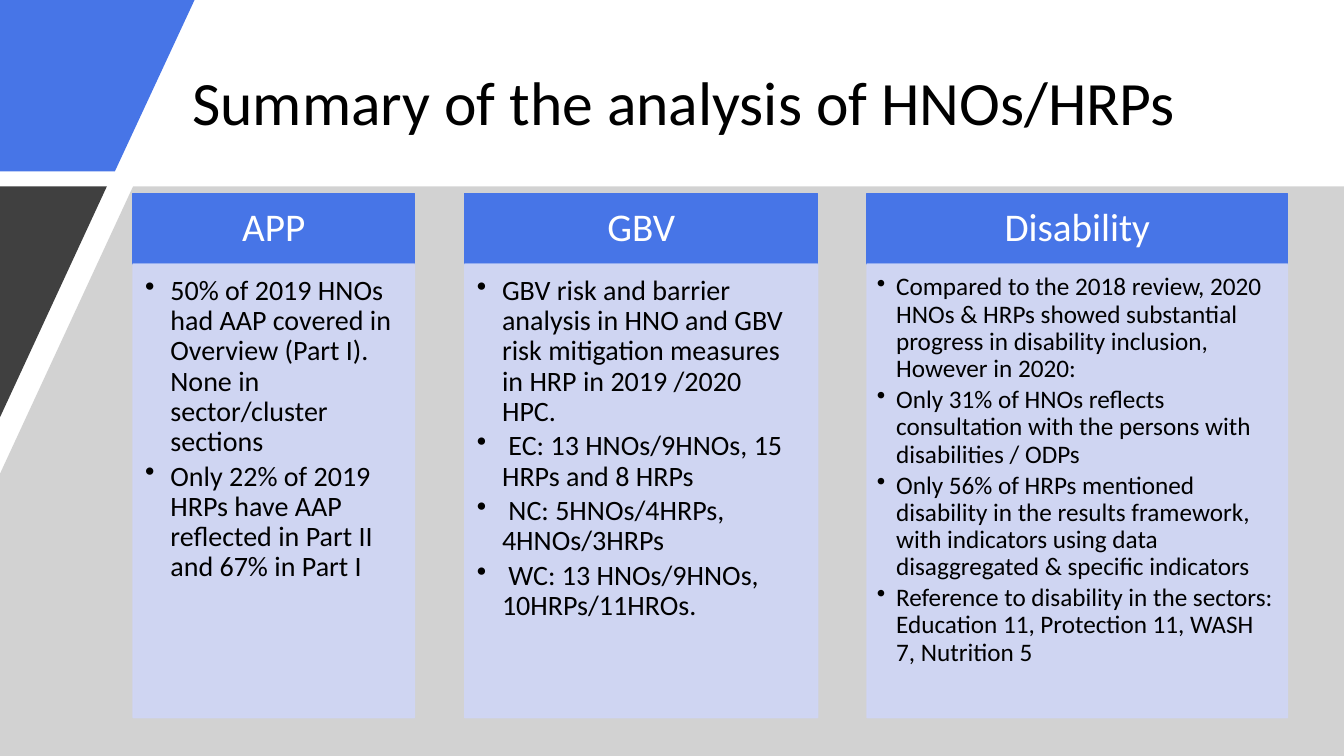
import pptx
import pptx.dml.color
import pptx.enum.shapes
import pptx.enum.text
import pptx.oxml
import pptx.oxml.ns
import pptx.util
from lxml import etree

PX = 9144  # 100 px to the inch
SLIDE_WIDTH, SLIDE_HEIGHT = 1333, 750
FONT = "Calibri"
BLUE, PALE_BLUE, GREY, DARK = "4775E7", "CFD6F6", "A6A6A6", "404040"
BLACK, WHITE = "000000", "FFFFFF"

HEADER_TOP, HEADER_HEIGHT, BODY_HEIGHT = 192, 70, 450
HEADER_INSETS = (22, 12, 22, 12)
WIDE_INSETS = (12, 12, 16, 17)
TIGHT_INSETS = (10, 10, 14, 16)

# heading, left, width, text size, bullet indent, body insets, points
COLUMNS = [
    ("APP", 132, 279, 20, 25, WIDE_INSETS, [
        "50% of 2019 HNOs had AAP covered in Overview (Part I). None in sector/cluster sections",
        "Only 22% of 2019 HRPs have AAP reflected in Part II and 67% in Part I",
    ]),
    ("GBV", 461, 350, 20, 25, WIDE_INSETS, [
        "GBV risk and barrier analysis in HNO and GBV risk mitigation measures in HRP in 2019 /2020 HPC. ",
        " EC: 13 HNOs/9HNOs, 15 HRPs and 8 HRPs",
        " NC: 5HNOs/4HRPs, 4HNOs/3HRPs",
        " WC: 13 HNOs/9HNOs, 10HRPs/11HROs. ",
    ]),
    ("Disability", 860, 417, 18, 19, TIGHT_INSETS, [
        "Compared to the 2018 review, 2020 HNOs & HRPs showed substantial progress in disability "
        "inclusion, However in 2020: ",
        "Only 31% of HNOs reflects consultation with the persons with disabilities / ODPs ",
        "Only 56% of HRPs mentioned disability in the results framework, with indicators using data "
        "disaggregated & specific indicators ",
        "Reference to disability in the sectors: Education 11, Protection 11, WASH 7, Nutrition 5 ",
    ]),
]


def px(length):
    return pptx.util.Emu(length * PX)


def color(hex_code):
    return pptx.dml.color.RGBColor.from_string(hex_code)


def paint(fill, hex_code, opacity=100):
    """Give a shape's or a line's fill a solid colour, opacity in percent."""
    fill.solid()
    fill.fore_color.rgb = color(hex_code)
    if opacity < 100:
        fill_xml = fill._xPr.find(pptx.oxml.ns.qn("a:solidFill"))
        alpha = etree.SubElement(fill_xml[0], pptx.oxml.ns.qn("a:alpha"))
        alpha.set("val", str(opacity * 1000))


def add_polygon(page, points, hex_code, opacity=100):
    builder = page.shapes.build_freeform(*points[0], scale=PX)
    builder.add_line_segments(points[1:], close=True)
    shape = builder.convert_to_shape()
    shape.shadow.inherit = False
    paint(shape.fill, hex_code, opacity)
    shape.line.fill.background()


def add_card(page, left, top, width, height, hex_code, opacity=100):
    card = page.shapes.add_shape(
        pptx.enum.shapes.MSO_SHAPE.RECTANGLE, px(left), px(top), px(width), px(height))
    card.shadow.inherit = False
    paint(card.fill, hex_code, opacity)
    card.line.width = pptx.util.Pt(1)
    paint(card.line.fill, hex_code, opacity)
    return card


def set_frame(box, insets, anchor):
    frame = box.text_frame
    frame.word_wrap = True
    frame.vertical_anchor = anchor
    frame.margin_left, frame.margin_top, frame.margin_right, frame.margin_bottom = map(px, insets)


def write(para, text, size, hex_code, align):
    para.alignment = align
    para.line_spacing = 0.9
    span = para.add_run()
    span.text = text
    span.font.name = FONT
    span.font.size = pptx.util.Pt(size)
    span.font.color.rgb = color(hex_code)


def add_bullet(para, indent):
    properties = para._p.get_or_add_pPr()
    properties.set("marL", str(px(indent)))
    properties.set("indent", str(-px(indent)))
    bullet = etree.SubElement(properties, pptx.oxml.ns.qn("a:buChar"))
    bullet.set("char", "•")


def add_title(page, text):
    box = page.shapes.add_textbox(px(181), px(40), px(1024), px(130))
    set_frame(box, (10, 5, 10, 5), pptx.enum.text.MSO_ANCHOR.MIDDLE)
    write(box.text_frame.paragraphs[0], text, 44, BLACK, pptx.enum.text.PP_ALIGN.LEFT)


def add_column(page, heading, left, width, size, indent, insets, points):
    header = add_card(page, left, HEADER_TOP, width, HEADER_HEIGHT, BLUE)
    set_frame(header, HEADER_INSETS, pptx.enum.text.MSO_ANCHOR.MIDDLE)
    write(header.text_frame.paragraphs[0], heading, 28, WHITE, pptx.enum.text.PP_ALIGN.CENTER)

    body = add_card(page, left, HEADER_TOP + HEADER_HEIGHT, width, BODY_HEIGHT, PALE_BLUE, 90)
    set_frame(body, insets, pptx.enum.text.MSO_ANCHOR.TOP)
    for index, point in enumerate(points):
        frame = body.text_frame
        para = frame.add_paragraph() if index else frame.paragraphs[0]
        write(para, point, size, BLACK, pptx.enum.text.PP_ALIGN.LEFT)
        para.space_after = pptx.util.Pt(size * 0.15)
        add_bullet(para, indent)


def main():
    deck = pptx.Presentation()
    deck.slide_width, deck.slide_height = px(SLIDE_WIDTH), px(SLIDE_HEIGHT)
    page = deck.slides.add_slide(deck.slide_layouts[6])

    add_title(page, "Summary of the analysis of HNOs/HRPs ")
    add_polygon(page, [(0, 0), (193, 0), (114, 170), (0, 170)], BLUE)
    add_polygon(page, [(132, 185), (SLIDE_WIDTH, 185), (SLIDE_WIDTH, SLIDE_HEIGHT),
                       (0, SLIDE_HEIGHT), (0, 470)], GREY, 50)
    add_polygon(page, [(0, 185), (106, 185), (0, 414)], DARK)
    for column in COLUMNS:
        add_column(page, *column)

    deck.save("out.pptx")


if __name__ == "__main__":
    main()
